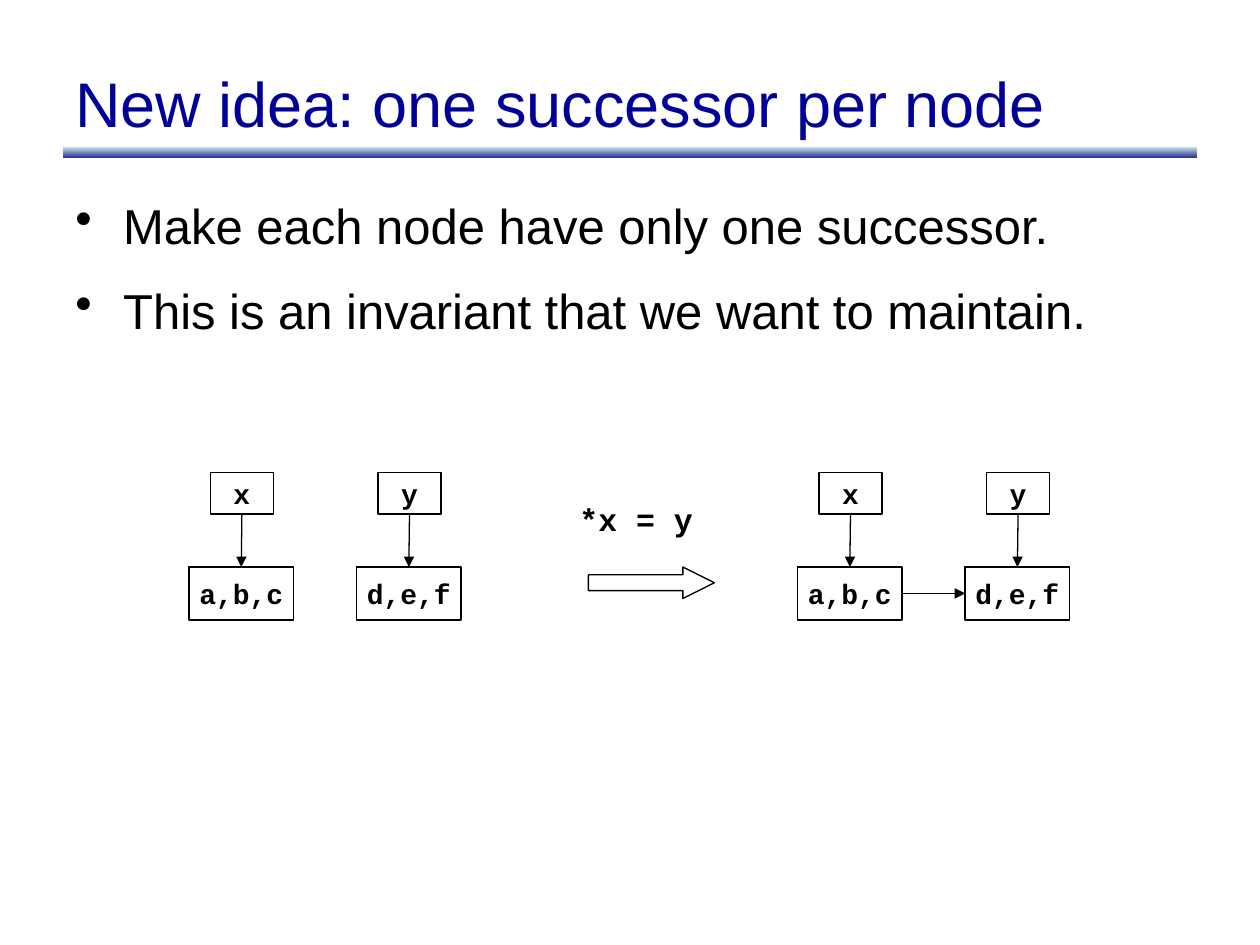
from lxml import etree
from pptx import Presentation
from pptx import util as u
from pptx.dml.color import RGBColor
from pptx.enum import shapes, text
from pptx.oxml.ns import qn

BLACK = "000000"
TITLE = {"name": "Arial", "size": u.Pt(36)}
BODY = {"name": "Arial", "size": u.Pt(28)}
NODE = {"name": "Courier New", "size": u.Pt(16), "bold": True}
CODE = {"name": "Courier New", "size": u.Pt(18), "bold": True}
TOP, LEFT, BOTTOM, RIGHT = range(4)  # connection sites of a rectangle


def rgb(value):
    return RGBColor.from_string(value)


def write(p, words, fmt, color=BLACK):
    r = p.add_run()
    r.text = words
    for name, value in fmt.items():
        setattr(r.font, name, value)
    r.font.color.rgb = rgb(color)


def add_text(s, box, lines, fmt, color=BLACK, wrap=True,
             anchor=text.MSO_ANCHOR.TOP):
    tf = s.shapes.add_textbox(*map(u.Inches, box)).text_frame
    tf.word_wrap = wrap
    tf.vertical_anchor = anchor
    for i, line in enumerate(lines):
        p = tf.add_paragraph() if i else tf.paragraphs[0]
        write(p, line, fmt, color)
    return tf


def add_bullets(s, box, lines, fmt):
    for p in add_text(s, box, lines, fmt).paragraphs:
        p.space_before = u.Pt(15)
        pPr = p._p.get_or_add_pPr()
        pPr.set("marL", str(u.Inches(0.38)))
        pPr.set("indent", str(u.Inches(-0.38)))
        etree.SubElement(pPr, qn("a:buChar")).set("char", "•")


def add_rule(s, box):
    sp = s.shapes.add_shape(shapes.MSO_SHAPE.RECTANGLE, *map(u.Inches, box))
    sp.shadow.inherit = False
    sp.line.fill.background()
    sp.fill.gradient()
    sp.fill.gradient_angle = 270
    for stop, color, pos in zip(sp.fill.gradient_stops,
                                ("BBE0E3", "333399"), (0, 1)):
        stop.color.rgb = rgb(color)
        stop.position = pos


def add_outline(s, kind, box):
    sp = s.shapes.add_shape(kind, *map(u.Inches, box))
    sp.shadow.inherit = False
    sp.fill.background()
    sp.line.color.rgb = rgb(BLACK)
    sp.line.width = u.Pt(0.75)
    return sp


def add_node(s, box, label):
    sp = add_outline(s, shapes.MSO_SHAPE.RECTANGLE, box)
    tf = sp.text_frame
    tf.word_wrap = False
    tf.vertical_anchor = text.MSO_ANCHOR.MIDDLE
    p = tf.paragraphs[0]
    p.alignment = text.PP_ALIGN.CENTER
    write(p, label, NODE)
    return sp


def link(s, start, start_site, end, end_site):
    c = s.shapes.add_connector(shapes.MSO_CONNECTOR.STRAIGHT, 0, 0, 0, 0)
    c.begin_connect(start, start_site)
    c.end_connect(end, end_site)
    c.line.color.rgb = rgb(BLACK)
    c.line.width = u.Pt(0.75)
    etree.SubElement(c.line._get_or_add_ln(), qn("a:tailEnd")).set("type", "triangle")
    etree.SubElement(c._element.spPr, qn("a:effectLst"))


def add_pair(s, center, variable, targets):
    """A variable with an arrow down to its set; returns the set."""
    top = add_node(s, (center - 0.25, 3.75, 0.5, 0.33), variable)
    bottom = add_node(s, (center - 0.42, 4.5, 0.83, 0.42), targets)
    link(s, top, BOTTOM, bottom, TOP)
    return bottom


def add_graph(s, center):
    return (add_pair(s, center, "x", "a,b,c"),
            add_pair(s, center + 1.33, "y", "d,e,f"))


def main():
    prs = Presentation()
    prs.slide_width, prs.slide_height = u.Inches(10), u.Inches(7.5)
    s = prs.slides.add_slide(prs.slide_layouts[6])

    # Heading and bullets
    add_rule(s, (0.5, 1.17, 9, 0.08))
    add_text(s, (0.5, 0.3, 9, 1.03), ["New idea: one successor per node"],
             TITLE, "000099", anchor=text.MSO_ANCHOR.MIDDLE)
    add_bullets(s, (0.5, 1.5, 9, 1.4),
                ["Make each node have only one successor.",
                 "This is an invariant that we want to maintain."], BODY)

    # Graph before the assignment
    add_graph(s, 1.92)

    # The assignment
    add_text(s, (4.5, 3.92, 1.1, 0.4), ["*x = y"], CODE, wrap=False)
    arrow = add_outline(s, shapes.MSO_SHAPE.RIGHT_ARROW, (4.67, 4.5, 1, 0.25))
    arrow.adjustments[0], arrow.adjustments[1] = 0.5, 1

    # Graph after the assignment
    abc, def_ = add_graph(s, 6.75)
    link(s, abc, RIGHT, def_, LEFT)

    prs.save("out.pptx")


if __name__ == "__main__":
    main()
